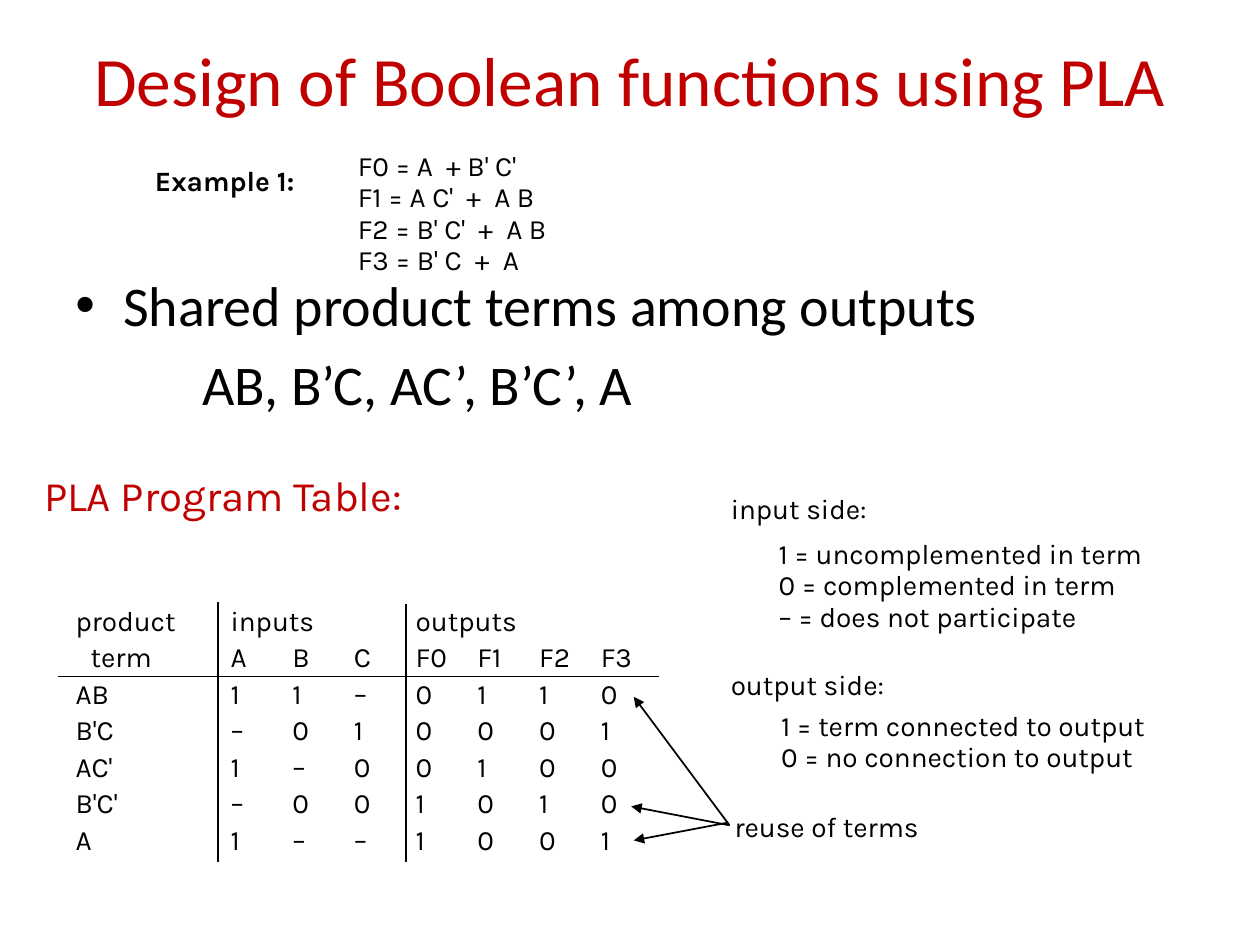
"""Builds a slide on designing Boolean functions with a PLA."""
from dataclasses import dataclass

from lxml.etree import SubElement
from pptx import Presentation
from pptx.dml.color import RGBColor
from pptx.enum.shapes import MSO_CONNECTOR as Connector
from pptx.enum.text import MSO_ANCHOR as Anchor, PP_ALIGN as Align
from pptx.oxml.ns import qn
from pptx.util import Inches, Pt


@dataclass(frozen=True)
class Theme:
    """Colours, fonts and type sizes of the slide."""
    ink: RGBColor = RGBColor(0x00, 0x00, 0x00)
    accent: RGBColor = RGBColor(0xC0, 0x00, 0x00)
    title_font: str = "Calibri"
    note_font: str = "Karla"
    title_size: float = 39.6
    bullet_size: float = 32
    heading_size: float = 24
    note_size: float = 16
    tight: float = 17.8
    loose: float = 20.7


THEME = Theme()

NOTES = [
    (1.21, 1.25, 1.33, 0.43, ["Example 1:"], {"bold": True, "spacing": THEME.loose}),
    (2.82, 1.17, 2.12, 1.12,
     ["F0 = A  + B' C'", "F1 = A C'  +  A B", "F2 = B' C'  +  A B", "F3 = B' C  +  A"], {}),
    (0.33, 3.81, 3, 0.77, ["PLA Program Table:"],
     {"size": THEME.heading_size, "color": THEME.accent, "spacing": THEME.loose}),
    (6.16, 4.25, 3.44, 0.88,
     ["1 = uncomplemented in term", "0 = complemented in term", "– = does not participate"], {}),
    (6.18, 5.61, 3.56, 0.63,
     ["1 = term connected to output", "0 = no connection to output"], {}),
    (5.78, 3.89, 1.49, 0.38, ["input side:"], {}),
    (5.78, 5.29, 1.7, 0.38, ["output side:"], {}),
    (5.81, 6.36, 1.93, 0.71, ["reuse of terms"], {"spacing": 21.7}),
]

PROGRAM = [
    ["product", "inputs", "", "", "outputs", "", "", ""],
    ["term", "A", "B", "C", "F0", "F1", "F2", "F3"],
    ["AB", "1", "1", "–", "0", "1", "1", "0"],
    ["B'C", "–", "0", "1", "0", "0", "0", "1"],
    ["AC'", "1", "–", "0", "0", "1", "0", "0"],
    ["B'C'", "–", "0", "0", "1", "0", "1", "0"],
    ["A", "1", "–", "–", "1", "0", "0", "1"],
]

RULES = [(0.46, 5.37, 5.23, 5.37), (3.22, 4.79, 3.22, 6.84), (1.73, 4.78, 1.73, 6.84)]
ARROWS = [(5.79, 6.55, 5.03, 5.53), (5.79, 6.55, 5.01, 6.4), (5.77, 6.53, 5.03, 6.67)]


def add_span(para, text, font=THEME.note_font, size=THEME.note_size,
             color=THEME.ink, bold=False):
    """Add formatted text to a paragraph."""
    span = para.add_run()
    span.text = text
    for name, value in {"name": font, "size": Pt(size), "bold": bold}.items():
        setattr(span.font, name, value)
    span.font.color.rgb = color


def add_box(page, left, top, width, height, side=0.02, edge=0.03):
    """Add a wrapping text box and return its text frame."""
    frame = page.shapes.add_textbox(
        Inches(left), Inches(top), Inches(width), Inches(height)).text_frame
    values = {"word_wrap": True, "margin_left": Inches(side), "margin_right": Inches(side),
              "margin_top": Inches(edge), "margin_bottom": Inches(edge)}
    for name, value in values.items():
        setattr(frame, name, value)
    return frame


def add_note(page, left, top, width, height, lines, spacing=THEME.tight, **style):
    """Add a text box with one paragraph for each line."""
    frame = add_box(page, left, top, width, height)
    for index, line in enumerate(lines):
        para = frame.add_paragraph() if index else frame.paragraphs[0]
        para.line_spacing = Pt(spacing)
        add_span(para, line, **style)


def add_title(page, text):
    """Place and fill the title placeholder."""
    title = page.shapes.title
    values = {"left": Inches(0.5), "top": Inches(0), "width": Inches(9), "height": Inches(1.25)}
    for name, value in values.items():
        setattr(title, name, value)
    title.text_frame.vertical_anchor = Anchor.MIDDLE
    para = title.text_frame.paragraphs[0]
    para.alignment = Align.CENTER
    add_span(para, text, THEME.title_font, THEME.title_size, THEME.accent)


def indent(para, margin, first=0):
    """Set the left margin and first-line indent of a paragraph."""
    properties = para._p.get_or_add_pPr()
    properties.set("marL", str(Inches(margin)))
    properties.set("indent", str(Inches(first)))
    return properties


def add_shared_terms(page):
    """Add the bullet and the list of shared terms below it."""
    frame = add_box(page, 0.5, 2.1, 9, 1.4, side=0.1, edge=0.05)
    bullet, terms = frame.paragraphs[0], frame.add_paragraph()
    properties = indent(bullet, 0.38, -0.38)
    SubElement(properties, qn("a:buFont")).set("typeface", "Arial")
    SubElement(properties, qn("a:buChar")).set("char", "•")
    indent(terms, 1.01)
    terms.space_before = Pt(0.2 * THEME.bullet_size)
    add_span(bullet, "Shared product terms among outputs", THEME.title_font, THEME.bullet_size)
    add_span(terms, "AB, B’C, AC’, B’C’, A", THEME.title_font, THEME.bullet_size)


def add_program_table(page, left=0.6, top=4.78, first=1.23, pitch=0.49, row_height=0.29):
    """Add the PLA program table without fills or banding."""
    rows, columns = len(PROGRAM), len(PROGRAM[0])
    table = page.shapes.add_table(
        rows, columns, Inches(left), Inches(top),
        Inches(first + pitch * (columns - 1)), Inches(row_height * rows)).table
    table.first_row = table.horz_banding = False
    for index, column in enumerate(table.columns):
        column.width = Inches(pitch if index else first)
    for row, values in zip(table.rows, PROGRAM):
        row.height = Inches(row_height)
        for cell, value in zip(row.cells, values):
            fill_cell(cell, value)
    table.cell(0, 1).merge(table.cell(0, 3))
    table.cell(0, 4).merge(table.cell(0, 7))
    table.cell(1, 0).margin_left = Inches(0.12)


def fill_cell(cell, value):
    """Write one table cell with no margins, borders or fill."""
    for side in ("left", "right", "top", "bottom"):
        setattr(cell, f"margin_{side}", 0)
    for edge in ("a:lnL", "a:lnR", "a:lnT", "a:lnB"):
        border = SubElement(cell._tc.get_or_add_tcPr(), qn(edge))
        SubElement(border, qn("a:noFill"))
    cell.fill.background()
    para = cell.text_frame.paragraphs[0]
    para.line_spacing = Pt(THEME.loose)
    add_span(para, value)


def add_line(page, ends, arrow=False):
    """Add a thin straight line, with an arrowhead at its end if asked."""
    line = page.shapes.add_connector(Connector.STRAIGHT, *map(Inches, ends))
    line.line.color.rgb = THEME.ink
    line.line.width = Pt(1)
    if arrow:
        SubElement(line.line._get_or_add_ln(), qn("a:tailEnd")).set("type", "triangle")
    SubElement(line._element.spPr, qn("a:effectLst"))


def main():
    """Build and save the deck."""
    deck = Presentation()
    deck.slide_width, deck.slide_height = Inches(10), Inches(7.5)
    page = deck.slides.add_slide(deck.slide_layouts[5])
    add_title(page, "Design of Boolean functions using PLA")
    add_shared_terms(page)
    for left, top, width, height, lines, style in NOTES:
        add_note(page, left, top, width, height, lines, **style)
    add_program_table(page)
    for ends in RULES:
        add_line(page, ends)
    for ends in ARROWS:
        add_line(page, ends, arrow=True)
    deck.save("out.pptx")


if __name__ == "__main__":
    main()
